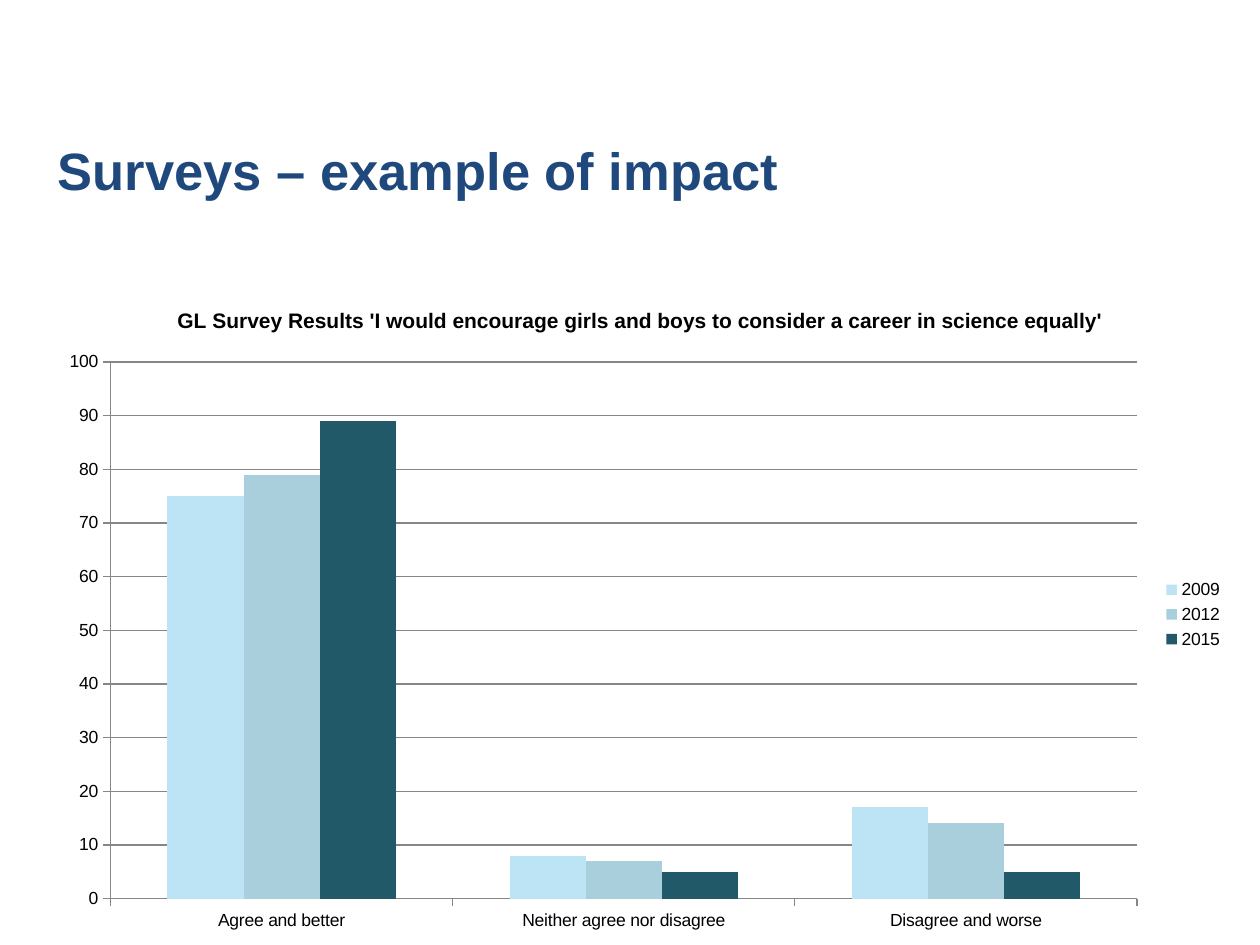
import pptx
import pptx.util
import pptx.chart.data
import pptx.dml.color
import pptx.enum.chart
import pptx.enum.text
import pptx.oxml

SCALE = 914400 / 126
COLORS = {"heading": "1F497D", "text": "000000", "grid": "868686",
          "2009": "BCE4F5", "2012": "A9CEDC", "2015": "215968"}
ANSWERS = ["Agree and better", "Neither agree nor disagree", "Disagree and worse"]
RESULTS = {"2009": (75, 8, 17), "2012": (79, 7, 14), "2015": (89, 5, 5)}
QUESTION = ("GL Survey Results 'I would encourage girls and boys "
            "to consider a career in science equally'")


def px(length):
    return pptx.util.Emu(round(length * SCALE))


def rgb(name):
    return pptx.dml.color.RGBColor.from_string(COLORS[name])


def set_all(target, values):
    for name, value in values.items():
        setattr(target, name, value)


def style_font(font, size, color, bold=False):
    set_all(font, {"name": "Arial", "size": pptx.util.Pt(size), "bold": bold})
    font.color.rgb = rgb(color)


def style_line(line):
    line.color.rgb = rgb("grid")
    line.width = pptx.util.Pt(0.75)


def place_plot(chart, box, plot_box):
    left, top, width, height = box
    plot_left, plot_top, plot_width, plot_height = plot_box
    fractions = {"x": plot_left / width, "y": plot_top / height,
                 "w": plot_width / width, "h": plot_height / height}
    sizes = "".join(f'<c:{key} val="{value:.3f}"/>' for key, value in fractions.items())
    layout = pptx.oxml.parse_xml(
        '<c:layout xmlns:c="http://schemas.openxmlformats.org/drawingml/2006/chart">'
        '<c:manualLayout><c:layoutTarget val="inner"/>'
        '<c:xMode val="edge"/><c:yMode val="edge"/>'
        f'{sizes}</c:manualLayout></c:layout>')
    plot_area = chart.plots[0]._element.getparent()
    for old_layout in plot_area.findall(layout.tag):
        plot_area.remove(old_layout)
    plot_area.insert(0, layout)


def add_heading(slide, box):
    frame = slide.shapes.add_textbox(*map(px, box)).text_frame
    set_all(frame, {"word_wrap": True, "margin_left": px(13), "margin_right": px(13),
                    "margin_top": px(13), "margin_bottom": px(13),
                    "vertical_anchor": pptx.enum.text.MSO_ANCHOR.TOP})
    heading = frame.paragraphs[0].add_run()
    heading.text = "Surveys – example of impact"
    style_font(heading.font, 30, "heading", True)


def add_survey_chart(slide, box):
    survey = pptx.chart.data.CategoryChartData()
    survey.categories = ANSWERS
    for year, percentages in RESULTS.items():
        survey.add_series(year, percentages)
    chart = slide.shapes.add_chart(
        pptx.enum.chart.XL_CHART_TYPE.COLUMN_CLUSTERED, *map(px, box), survey).chart
    style_font(chart.font, 10, "text")

    set_all(chart, {"has_title": True, "has_legend": True})
    question = chart.chart_title.text_frame.paragraphs[0].add_run()
    question.text = QUESTION
    style_font(question.font, 12, "text", True)
    set_all(chart.legend, {"position": pptx.enum.chart.XL_LEGEND_POSITION.RIGHT,
                           "include_in_layout": False})

    columns = chart.plots[0]
    set_all(columns, {"gap_width": 150, "overlap": 0, "vary_by_categories": False})
    for year in columns.series:
        year.format.fill.solid()
        year.format.fill.fore_color.rgb = rgb(year.name)

    for axis in (chart.category_axis, chart.value_axis):
        set_all(axis, {"major_tick_mark": pptx.enum.chart.XL_TICK_MARK.OUTSIDE,
                       "minor_tick_mark": pptx.enum.chart.XL_TICK_MARK.NONE})
        style_line(axis.format.line)
    set_all(chart.value_axis, {"minimum_scale": 0, "maximum_scale": 100,
                               "major_unit": 10, "has_major_gridlines": True})
    style_line(chart.value_axis.major_gridlines.format.line)
    place_plot(chart, box, (65, 78, 1027, 537))


def main():
    deck = pptx.Presentation()
    set_all(deck, {"slide_width": px(1260), "slide_height": px(945)})
    slide = deck.slides.add_slide(deck.slide_layouts[6])
    add_heading(slide, (45, 125, 1169, 179))
    add_survey_chart(slide, (45, 284, 1191, 661))
    deck.save("out.pptx")


if __name__ == "__main__":
    main()
